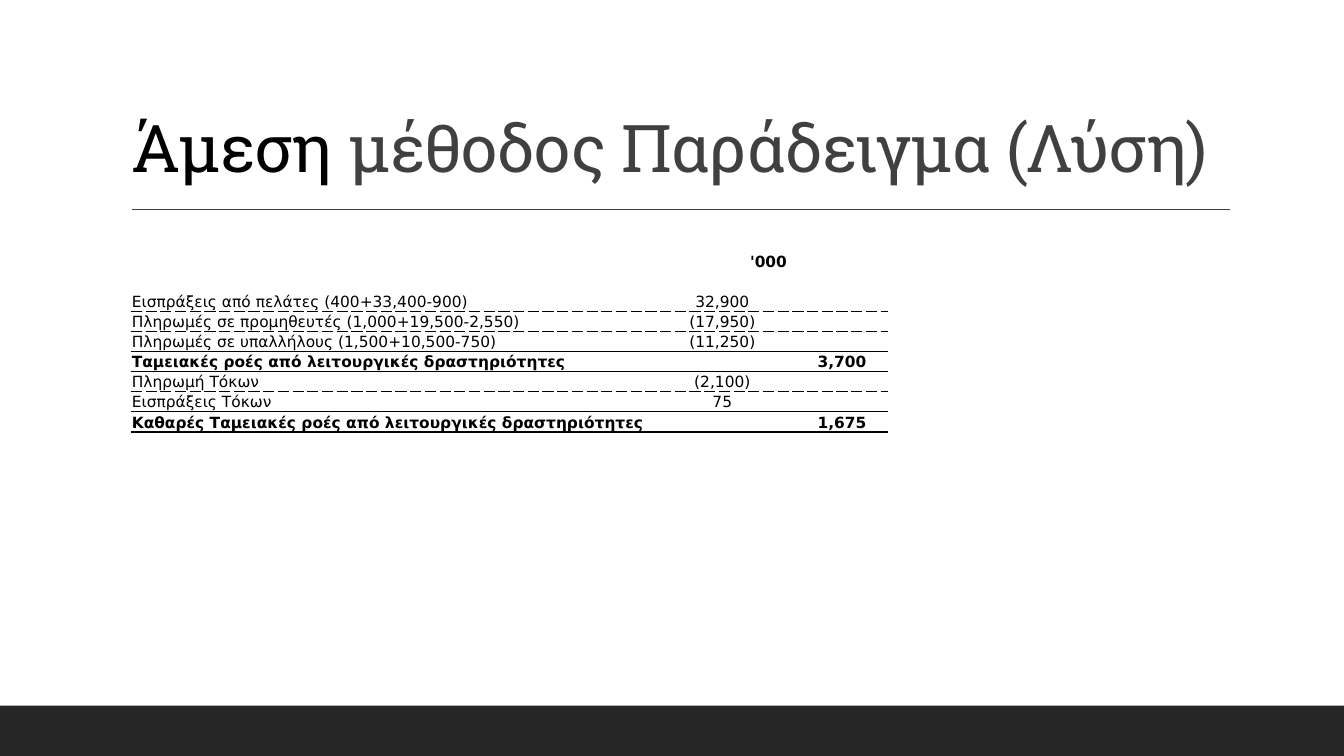
from dataclasses import dataclass
from lxml.etree import SubElement as Sub
from pptx import Presentation
from pptx.dml.color import RGBColor as RGB
from pptx.enum.shapes import MSO_CONNECTOR as CONN, MSO_SHAPE as SHAPE
from pptx.enum.text import MSO_ANCHOR as ANCHOR, MSO_AUTO_SIZE as FIT, PP_ALIGN as ALIGN
from pptx.oxml.ns import qn
from pptx.util import Pt


@dataclass(frozen=True)
class Theme:
    black: str = "000000"
    gray: str = "404040"
    dark: str = "262626"
    head: str = "Roboto Slab"
    body: str = "DejaVu Sans"
    big: float = 47
    small: float = 11


THIN, DASH, THICK = (0.5, "solid"), (0.5, "dash"), (2, "solid")
WIDTHS = (370, 105, 66)
ROWS = [
    (13.4, ("", "'000", ""), True, None),
    (14.25, ("", "", ""), False, None),
    (14.25, ("Εισπράξεις από πελάτες (400+33,400-900)", "32,900", ""), False, DASH),
    (14.25, ("Πληρωμές σε προμηθευτές (1,000+19,500-2,550)", "(17,950)", ""), False, DASH),
    (14.25, ("Πληρωμές σε υπαλλήλους (1,500+10,500-750)", "(11,250)", ""), False, THIN),
    (14.25, ("Ταμειακές ροές από λειτουργικές δραστηριότητες", "", "3,700"), True, THIN),
    (14.25, ("Πληρωμή Τόκων", "(2,100)", ""), False, DASH),
    (14.25, ("Εισπράξεις Τόκων", "75", ""), False, THIN),
    (14.9, ("Καθαρές Ταμειακές ροές από λειτουργικές δραστηριότητες", "", "1,675"), True, THICK),
]


def apply(item, form):
    for name, value in form.items():
        setattr(item, name, value)


class Page:
    def __init__(self, deck, theme):
        self.theme = theme
        self.slide = deck.slides.add_slide(deck.slide_layouts[5])
        self.shapes = self.slide.shapes

    def font(self, run, face, size, color, bold=False):
        apply(run.font, {"name": face, "size": Pt(size), "bold": bold})
        run.font.color.rgb = RGB.from_string(color)

    def band(self, left, top, width, height, color):
        band = self.shapes.add_shape(SHAPE.RECTANGLE, Pt(left), Pt(top), Pt(width), Pt(height))
        band.shadow.inherit = False
        band.fill.solid()
        band.fill.fore_color.rgb = RGB.from_string(color)
        band.line.fill.background()

    def rule(self, left, top, right, color):
        rule = self.shapes.add_connector(CONN.STRAIGHT, Pt(left), Pt(top), Pt(right), Pt(top))
        rule.line.width = Pt(1)
        rule.line.color.rgb = RGB.from_string(color)
        Sub(rule._element.spPr, qn("a:effectLst"))

    def title(self, left, top, width, height, parts):
        title = self.shapes.title
        apply(title, {"left": Pt(left), "top": Pt(top), "width": Pt(width), "height": Pt(height)})
        frame = title.text_frame
        apply(frame, {"word_wrap": True, "auto_size": FIT.NONE, "vertical_anchor": ANCHOR.BOTTOM})
        para = frame.paragraphs[0]
        apply(para, {"alignment": ALIGN.LEFT, "line_spacing": 0.9})
        for text, color in parts:
            run = para.add_run()
            run.text = text
            self.font(run, self.theme.head, self.theme.big, color)
            run.font._element.set("spc", "-50")

    def edge(self, cell, upper, lower):
        props = cell._tc.get_or_add_tcPr()
        edges = {"a:lnL": None, "a:lnR": None, "a:lnT": upper, "a:lnB": lower}
        for spot, (tag, style) in enumerate(edges.items()):
            line = Sub(props, qn(tag))
            props.insert(spot, line)
            if style is None:
                Sub(line, qn("a:noFill"))
                continue
            width, dash = style
            line.set("w", str(Pt(width)))
            Sub(Sub(line, qn("a:solidFill")), qn("a:srgbClr"), val=self.theme.black)
            Sub(line, qn("a:prstDash"), val=dash)

    def fill(self, cell, text, bold, align):
        apply(cell, {
            "margin_left": Pt(0.7), "margin_right": Pt(0.7), "margin_top": Pt(0.7),
            "margin_bottom": 0, "vertical_anchor": ANCHOR.BOTTOM,
        })
        cell.fill.background()
        para = cell.text_frame.paragraphs[0]
        para.alignment = align
        if text:
            run = para.add_run()
            run.text = text
            self.font(run, self.theme.body, self.theme.small, self.theme.black, bold)
        else:
            Sub(para._p, qn("a:endParaRPr"), sz=str(self.theme.small * 100))

    def table(self, left, top, widths, rows):
        height = sum(row[0] for row in rows)
        frame = self.shapes.add_table(len(rows), len(widths), Pt(left), Pt(top), Pt(sum(widths)), Pt(height))
        grid = frame.table
        apply(grid, {"first_row": False, "horz_banding": False})
        for col, width in zip(grid.columns, widths):
            col.width = Pt(width)
        upper = None
        for row, (high, texts, bold, lower) in zip(grid.rows, rows):
            row.height = Pt(high)
            for spot, (cell, text) in enumerate(zip(row.cells, texts)):
                self.fill(cell, text, bold, ALIGN.CENTER if spot else ALIGN.LEFT)
                self.edge(cell, upper, lower)
            upper = lower
        grid.cell(0, 1).merge(grid.cell(0, 2))


def main():
    deck = Presentation()
    apply(deck, {"slide_width": Pt(960), "slide_height": Pt(540)})
    theme = Theme()
    page = Page(deck, theme)
    page.band(0, 504, 960, 36, theme.dark)
    page.rule(94.3, 149.5, 878.8, theme.gray)
    page.title(86.4, 22.5, 792, 114.5, [
        ("Άμεση", theme.black),
        (" μέθοδος Παράδειγμα (Λύση)", theme.gray),
    ])
    page.table(93.5, 179.2, WIDTHS, ROWS)
    deck.save("out.pptx")


if __name__ == "__main__":
    main()
